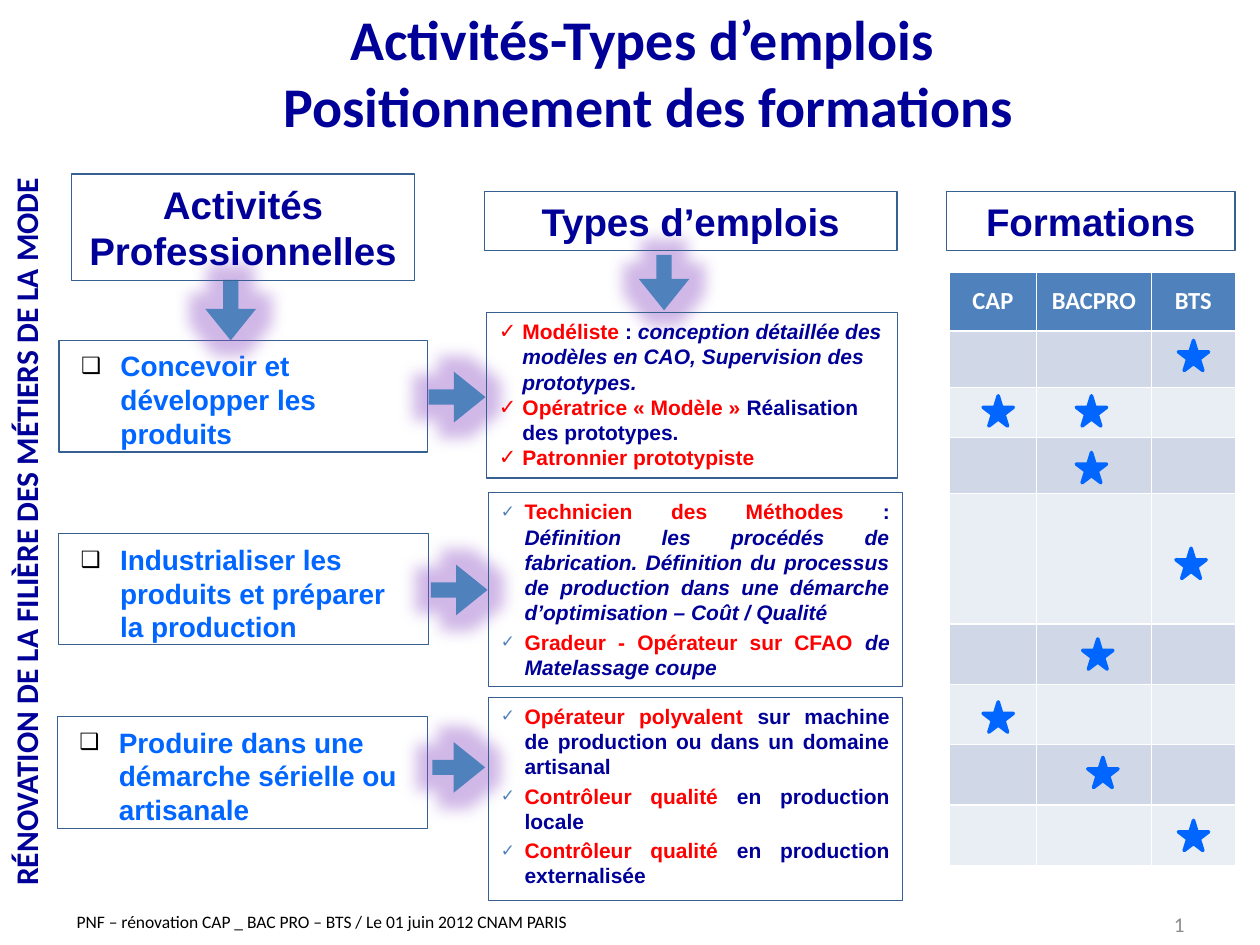
from lxml.etree import SubElement
from pptx import Presentation
from pptx.dml.color import RGBColor
from pptx.enum.shapes import MSO_SHAPE
from pptx.enum.text import MSO_ANCHOR, MSO_AUTO_SIZE, PP_ALIGN
from pptx.oxml.ns import qn
from pptx.util import Pt

COLORS = {
    "navy": "000099", "blue": "0066FF", "red": "FF0000", "black": "000000",
    "grey": "8C8C8C", "white": "FFFFFF", "border": "376092", "accent": "4F81BD",
    "band_dark": "D0D8E8", "band_light": "E9EDF4", "glow": "8B4DC4",
}

ACTIVITIES = [
    ((33.8, 194.4, 210.6, 64), "Concevoir et développer les produits"),
    ((33.5, 305, 211.5, 63.5), "Industrialiser les produits et préparer la production"),
    ((32.8, 409.4, 211.5, 64), "Produire dans une démarche sérielle ou artisanale"),
]

DESIGN_JOBS = [
    [("Modéliste", "red", False), (" : ", "navy", False),
     ("conception détaillée des modèles en CAO, Supervision des prototypes.", "navy", True)],
    [("Opératrice «\u00a0Modèle\u00a0» ", "red", False),
     ("Réalisation des prototypes.", "navy", False)],
    [("Patronnier prototypiste", "red", False)],
]
METHOD_JOBS = [
    [("Technicien des Méthodes ", "red", False), (": ", "navy", False),
     ("Définition les procédés de fabrication. Définition du processus de production "
      "dans une démarche d’optimisation – Coût / Qualité", "navy", True)],
    [("Gradeur - Opérateur sur CFAO ", "red", False), ("de Matelassage coupe", "navy", True)],
]
PRODUCTION_JOBS = [
    [("Opérateur polyvalent ", "red", False),
     ("sur machine de production ou dans un domaine artisanal", "navy", False)],
    [("Contrôleur qualité ", "red", False), ("en production locale", "navy", False)],
    [("Contrôleur qualité ", "red", False), ("en production externalisée", "navy", False)],
]

COLUMN_WIDTHS = [50, 65.5, 48]
ROW_HEIGHTS = [33.5, 32.5, 28.5, 32, 74.5, 34.5, 34.5, 34.5, 34.5]
STAR_SIZE = 17.3
STAR_OFFSETS = [
    (131, 38.9), (19.4, 70.6), (72.7, 70.6), (72.7, 103), (129.6, 157.7),
    (76.3, 209.5), (19.4, 245.5), (79.2, 277.2), (131, 313.2),
]


def rgb(name):
    return RGBColor.from_string(COLORS[name])


def points(box):
    return [Pt(value) for value in box]


def add_run(paragraph, text, size, color, font="Arial", bold=True, italic=False):
    run = paragraph.add_run()
    run.text = text
    run.font.name = font
    run.font.size = Pt(size)
    run.font.bold = bold
    run.font.italic = italic
    run.font.color.rgb = rgb(color)
    return run


def add_bullet(paragraph, character, left, hanging, color=None, percent=100):
    properties = paragraph._p.get_or_add_pPr()
    properties.set("marL", str(Pt(left)))
    properties.set("indent", str(-Pt(hanging)))
    if color:
        bullet_color = SubElement(properties, qn("a:buClr"))
        SubElement(bullet_color, qn("a:srgbClr")).set("val", COLORS[color])
    SubElement(properties, qn("a:buSzPct")).set("val", str(percent * 1000))
    SubElement(properties, qn("a:buFont")).set("typeface", "Arial")
    SubElement(properties, qn("a:buChar")).set("char", character)


def add_frame(slide, box, line_width=0.75, anchor=MSO_ANCHOR.TOP):
    shape = slide.shapes.add_shape(MSO_SHAPE.RECTANGLE, *points(box))
    shape.shadow.inherit = False
    shape.fill.background()
    shape.line.color.rgb = rgb("border")
    shape.line.width = Pt(line_width)
    shape.text_frame.word_wrap = True
    shape.text_frame.vertical_anchor = anchor
    return shape.text_frame


def add_title(slide, box):
    title = slide.shapes.title
    title.left, title.top, title.width, title.height = points(box)
    frame = title.text_frame
    frame.word_wrap = True
    frame.auto_size = MSO_AUTO_SIZE.NONE
    frame.vertical_anchor = MSO_ANCHOR.MIDDLE
    paragraph = frame.paragraphs[0]
    paragraph.alignment = PP_ALIGN.CENTER
    add_run(paragraph, "Activités-Types d’emplois ", 32, "navy", "Calibri")
    paragraph.add_line_break()
    add_run(paragraph, "Positionnement des formations", 32, "navy", "Calibri")


def add_label(slide, box, text, size, color, alignment, bold=False, rotation=0):
    label = slide.shapes.add_textbox(*points(box))
    label.rotation = rotation
    label.text_frame.word_wrap = True
    paragraph = label.text_frame.paragraphs[0]
    paragraph.alignment = alignment
    add_run(paragraph, text, size, color, "Calibri", bold)
    return label


def add_page_number(slide, box):
    label = add_label(slide, box, "6", 12, "grey", PP_ALIGN.RIGHT)
    label.text_frame.vertical_anchor = MSO_ANCHOR.MIDDLE
    run = label.text_frame.paragraphs[0].runs[0]._r
    run.tag = qn("a:fld")
    run.set("id", "{B6F15528-21DE-4FAA-801E-634DDDAF4B2B}")
    run.set("type", "slidenum")


def add_heading(slide, box, text):
    paragraph = add_frame(slide, box, anchor=MSO_ANCHOR.MIDDLE).paragraphs[0]
    paragraph.alignment = PP_ALIGN.CENTER
    add_run(paragraph, text, 22, "navy")


def add_activity(slide, box, text):
    frame = add_frame(slide, box)
    frame.margin_top = Pt(5)
    paragraph = frame.paragraphs[0]
    paragraph.alignment = PP_ALIGN.LEFT
    add_bullet(paragraph, "❑", 28, 22.5, "black", 80)
    add_run(paragraph, text, 16, "blue")


def add_jobs(slide, box, jobs, justified=True):
    frame = add_frame(slide, box, 0.25 if justified else 0.75)
    for index, runs in enumerate(jobs):
        paragraph = frame.add_paragraph() if index else frame.paragraphs[0]
        paragraph.alignment = PP_ALIGN.JUSTIFY if justified else PP_ALIGN.LEFT
        if justified:
            add_bullet(paragraph, "✓", 13.5, 13.5, "accent", 80)
        else:
            add_bullet(paragraph, "✓", 13.5, 13.5)
        if justified and index:
            paragraph.space_before = Pt(2.4)
        for text, color, italic in runs:
            add_run(paragraph, text, 12, color, italic=italic)


def add_arrow(slide, box, rotation=0):
    arrow = slide.shapes.add_shape(MSO_SHAPE.RIGHT_ARROW, *points(box))
    arrow.adjustments[0] = 0.3
    arrow.adjustments[1] = 0.62
    arrow.rotation = rotation
    arrow.fill.solid()
    arrow.fill.fore_color.rgb = rgb("accent")
    arrow.line.fill.background()
    arrow.shadow.inherit = False
    effects = arrow._element.spPr.find(qn("a:effectLst"))
    glow = SubElement(effects, qn("a:glow"))
    glow.set("rad", str(Pt(18)))
    color = SubElement(glow, qn("a:srgbClr"))
    color.set("val", COLORS["glow"])
    SubElement(color, qn("a:alpha")).set("val", "40000")


def add_training_table(slide, box):
    left, top = box[:2]
    table = slide.shapes.add_table(len(ROW_HEIGHTS), len(COLUMN_WIDTHS), *points(box)).table
    for column, width in zip(table.columns, COLUMN_WIDTHS):
        column.width = Pt(width)
    for index, (row, height) in enumerate(zip(table.rows, ROW_HEIGHTS)):
        row.height = Pt(height)
        fill = "band_dark" if index % 2 else "band_light"
        for cell in row.cells:
            cell.margin_top = cell.margin_bottom = Pt(0)
            cell.fill.solid()
            cell.fill.fore_color.rgb = rgb(fill if index else "accent")
    for cell, text in zip(table.rows[0].cells, ["CAP", "BACPRO", "BTS"]):
        cell.vertical_anchor = MSO_ANCHOR.MIDDLE
        paragraph = cell.text_frame.paragraphs[0]
        paragraph.alignment = PP_ALIGN.CENTER
        add_run(paragraph, text, 14, "white", "Calibri")
    for across, down in STAR_OFFSETS:
        star_box = (left + across, top + down, STAR_SIZE, STAR_SIZE)
        star = slide.shapes.add_shape(MSO_SHAPE.STAR_5_POINT, *points(star_box))
        star.shadow.inherit = False
        star.fill.solid()
        star.fill.fore_color.rgb = rgb("blue")
        star.line.color.rgb = rgb("blue")
        star.line.width = Pt(2)


def main():
    presentation = Presentation()
    presentation.slide_width, presentation.slide_height = Pt(720), Pt(540)
    slide = presentation.slides.add_slide(presentation.slide_layouts[5])
    add_title(slide, (36, 9.4, 669.6, 62.6))
    add_label(slide, (-198, 289.4, 425.5, 29), "RÉNOVATION DE LA FILIÈRE DES MÉTIERS DE LA MODE",
              18, "navy", PP_ALIGN.CENTER, True, 270)
    add_label(slide, (36.7, 517, 326, 19.4),
              "PNF – rénovation CAP _ BAC PRO – BTS / Le 01 juin 2012 CNAM PARIS",
              10, "black", PP_ALIGN.LEFT)
    for box, text in ACTIVITIES:
        add_activity(slide, box, text)
    for box in [(245, 212.4, 32.4, 29), (246.2, 322.6, 32.4, 29), (247, 424, 30.2, 29)]:
        add_arrow(slide, box)
    for box in [(114.5, 162.7, 34.6, 29), (363.6, 147, 31.7, 29)]:
        add_arrow(slide, box, 90)
    add_jobs(slide, (278, 178.6, 235, 94.5), DESIGN_JOBS, False)
    add_jobs(slide, (279.2, 281.5, 236.3, 110.8), METHOD_JOBS)
    add_jobs(slide, (279.2, 398.4, 236.3, 116), PRODUCTION_JOBS)
    add_heading(slide, (41, 99.5, 195.8, 60.7), "Activités Professionnelles")
    add_heading(slide, (276.7, 109.4, 236, 33.8), "Types d’emplois")
    add_heading(slide, (540.7, 109.4, 165, 33.8), "Formations")
    add_training_table(slide, (542.4, 155.6, 163.5, 339))
    add_page_number(slide, (626.4, 520.6, 57.6, 15))
    presentation.save("out.pptx")


if __name__ == "__main__":
    main()
